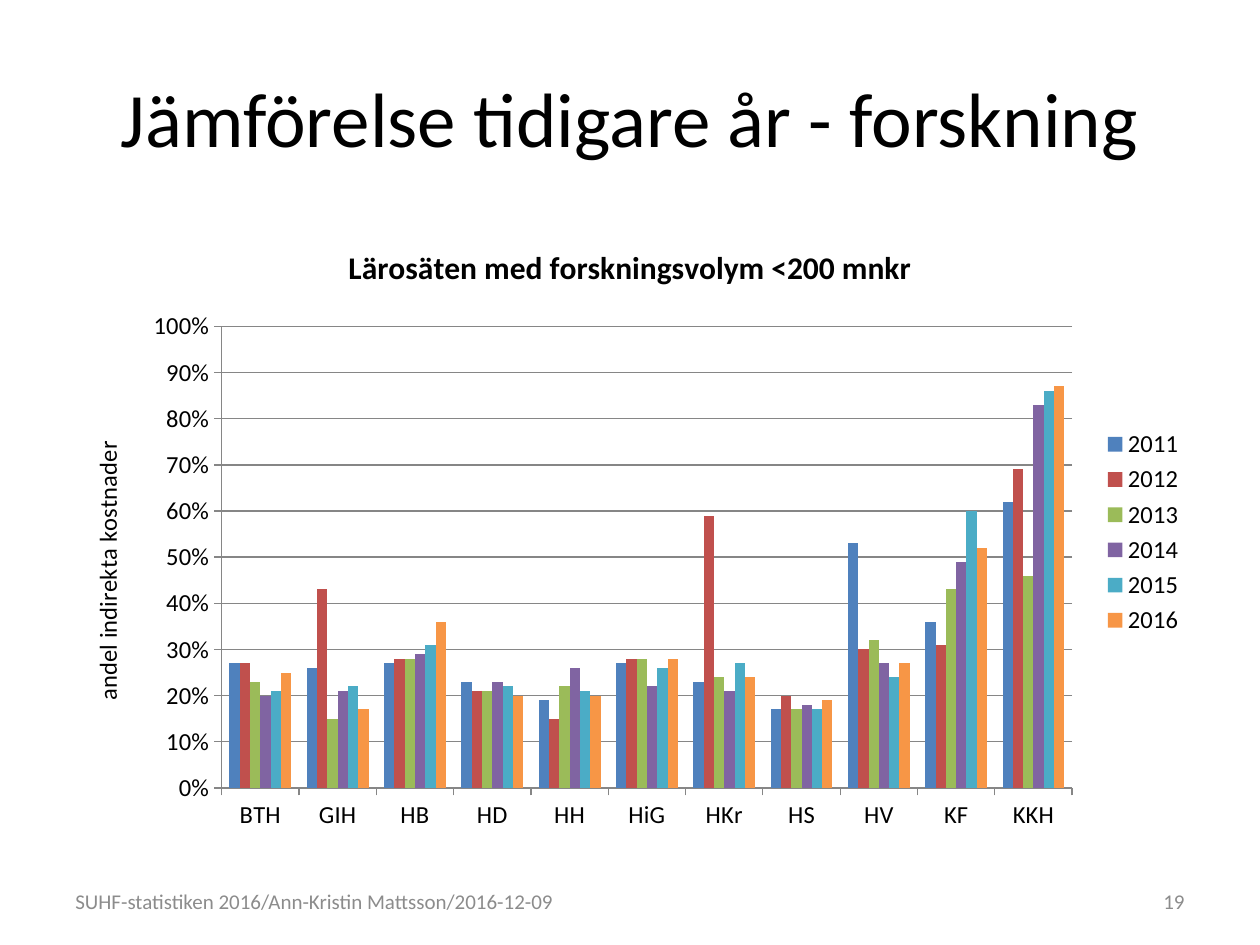
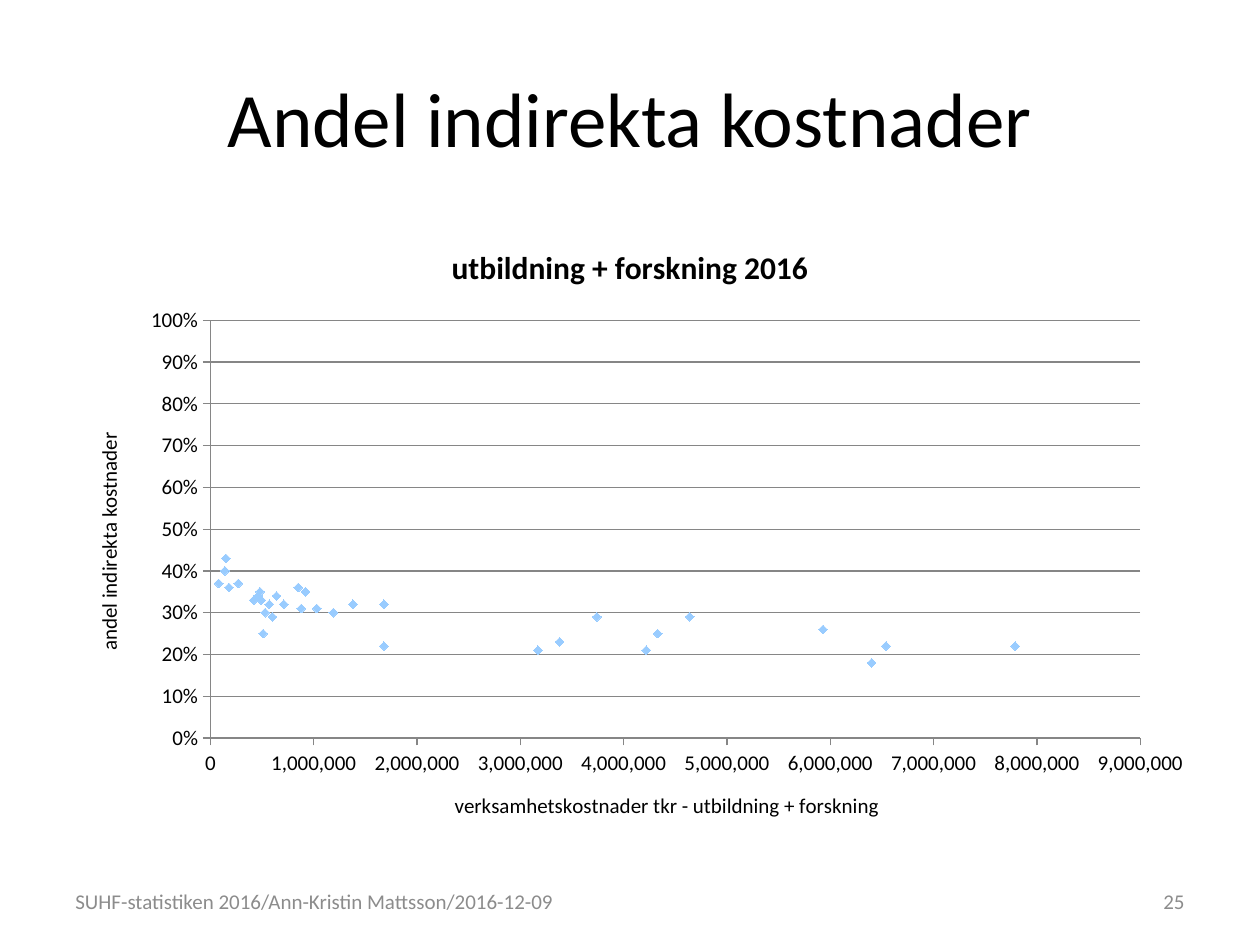
"""Builds two slides that chart the share of indirect costs at Swedish universities."""
from lxml import etree
from pptx import Presentation
from pptx import util as u
from pptx.chart import data as cd
from pptx.dml import color as dc
from pptx.enum import chart as ec, text as et
from pptx.oxml import ns

C = {"text": "000000", "muted": "8C8C8C", "axis": "868686", "point": "99CCFF"}
YEARS = {"2011": "4F81BD", "2012": "C0504D", "2013": "9BBB59",
         "2014": "8064A2", "2015": "4BACC6", "2016": "F79646"}
SCHOOLS = ["BTH", "GIH", "HB", "HD", "HH", "HiG", "HKr", "HS", "HV", "KF", "KKH"]
SHARES = [
    [0.27, 0.26, 0.27, 0.23, 0.19, 0.27, 0.23, 0.17, 0.53, 0.36, 0.62],
    [0.27, 0.43, 0.28, 0.21, 0.15, 0.28, 0.59, 0.2, 0.3, 0.31, 0.69],
    [0.23, 0.15, 0.28, 0.21, 0.22, 0.28, 0.24, 0.17, 0.32, 0.43, 0.46],
    [0.2, 0.21, 0.29, 0.23, 0.26, 0.22, 0.21, 0.18, 0.27, 0.49, 0.83],
    [0.21, 0.22, 0.31, 0.22, 0.21, 0.26, 0.27, 0.17, 0.24, 0.6, 0.86],
    [0.25, 0.17, 0.36, 0.2, 0.2, 0.28, 0.24, 0.19, 0.27, 0.52, 0.87]]
COSTS = [
    (0.42, 0.33), (3.38, 0.23), (0.51, 0.25), (0.14, 0.4), (5.93, 0.26), (0.64, 0.34),
    (0.6, 0.29), (0.53, 0.3), (0.57, 0.32), (0.85, 0.36), (0.49, 0.33), (0.46, 0.34),
    (0.48, 0.35), (1.03, 0.31), (0.18, 0.36), (6.4, 0.18), (0.08, 0.37), (0.15, 0.43),
    (4.33, 0.25), (3.74, 0.29), (1.68, 0.32), (1.68, 0.22), (7.79, 0.22), (1.38, 0.32),
    (0.88, 0.31), (0.92, 0.35), (0.71, 0.32), (0.27, 0.37), (3.17, 0.21), (4.64, 0.29),
    (4.22, 0.21), (6.54, 0.22), (1.19, 0.3)]

prs = Presentation()
prs.slide_width, prs.slide_height = u.Inches(10), u.Inches(7.5)
COL, ROW = prs.slide_width // 20, prs.slide_height // 150


def set_font(font, size, color="text", bold=False):
    """Apply one set of format values to a font."""
    fmt = {"name": "Calibri", "size": u.Pt(size), "bold": bold}
    for key, value in fmt.items():
        setattr(font, key, value)
    font.color.rgb = dc.RGBColor.from_string(C[color])


def add_title(owner, words, size, bold=False):
    """Give a chart or an axis a title."""
    tf = (owner.chart_title if hasattr(owner, "chart_title") else owner.axis_title).text_frame
    tf.text = words
    set_font(tf.paragraphs[0].runs[0].font, size, bold=bold)


bars = cd.CategoryChartData(number_format="0%")
bars.categories = SCHOOLS
for year, shares in zip(YEARS, SHARES):
    bars.add_series(year, shares)
dots = cd.XyChartData()
points = dots.add_series("Series 1")
for millions, share in COSTS:
    points.add_data_point(round(millions * 1_000_000), share)

pages = [
    {"title": "Jämförelse tidigare år - forskning", "number": "19", "data": bars,
     "kind": ec.XL_CHART_TYPE.COLUMN_CLUSTERED, "size": 14, "x_title": None,
     "heading": "Lärosäten med forskningsvolym <200 mnkr",
     "plot": {"x": 0.14, "y": 0.17, "w": 0.75, "h": 0.74}},
    {"title": "Andel indirekta kostnader", "number": "25", "data": dots,
     "kind": ec.XL_CHART_TYPE.XY_SCATTER, "size": 12,
     "x_title": "verksamhetskostnader tkr - utbildning + forskning",
     "heading": "utbildning + forskning 2016",
     "plot": {"x": 0.13, "y": 0.16, "w": 0.82, "h": 0.67}}]

for page in pages:
    s = prs.slides.add_slide(prs.slide_layouts[6])
    labels = [
        (page["title"], 1, 6, 18, 25, 44, "text", et.PP_ALIGN.CENTER),
        ("SUHF-statistiken 2016/Ann-Kristin Mattsson/2016-12-09",
         1, 139, 9, 8, 12, "muted", et.PP_ALIGN.LEFT),
        (page["number"], 14, 139, 5, 8, 12, "muted", et.PP_ALIGN.RIGHT)]
    for words, col, row, cols, rows, size, color, align in labels:
        tf = s.shapes.add_textbox(col * COL, row * ROW, cols * COL, rows * ROW).text_frame
        tf.word_wrap, tf.vertical_anchor = True, et.MSO_ANCHOR.MIDDLE
        p = tf.paragraphs[0]
        p.alignment = align
        r = p.add_run()
        r.text = words
        set_font(r.font, size, color)

    chart = s.shapes.add_chart(page["kind"], COL, 35 * ROW, 18 * COL, 99 * ROW,
                               page["data"]).chart
    set_font(chart.font, 10)
    add_title(chart, page["heading"], 18, bold=True)
    chart.chart_title.include_in_layout = False
    x_axis, y_axis = chart.category_axis, chart.value_axis
    for axis in (x_axis, y_axis):
        axis.has_major_gridlines = axis is y_axis
        axis.major_tick_mark = ec.XL_TICK_MARK.OUTSIDE
        axis.minor_tick_mark = ec.XL_TICK_MARK.NONE
        set_font(axis.tick_labels.font, page["size"])
        lines = [axis.format.line]
        if axis is y_axis:
            lines.append(axis.major_gridlines.format.line)
        for line in lines:
            line.color.rgb = dc.RGBColor.from_string(C["axis"])
            line.width = u.Pt(0.75)
    for key, value in {"minimum_scale": 0, "maximum_scale": 1, "major_unit": 0.1}.items():
        setattr(y_axis, key, value)
    y_axis.tick_labels.number_format = "0%"
    y_axis.tick_labels.number_format_is_linked = False
    add_title(y_axis, "andel indirekta kostnader", page["size"])

    plot = chart.plots[0]
    plot.vary_by_categories = False
    if page["data"] is bars:
        plot.gap_width, plot.overlap = 150, 0
        for series, color in zip(plot.series, YEARS.values()):
            series.format.fill.solid()
            series.format.fill.fore_color.rgb = dc.RGBColor.from_string(color)
        chart.has_legend = True
        chart.legend.position = ec.XL_LEGEND_POSITION.RIGHT
        chart.legend.include_in_layout = False
        set_font(chart.legend.font, page["size"])
    else:
        chart.has_legend = False
        add_title(x_axis, page["x_title"], page["size"])
        x_axis.minimum_scale, x_axis.maximum_scale = 0, 9_000_000
        x_axis.major_unit = 1_000_000
        x_axis.tick_labels.number_format = "#,##0"
        x_axis.tick_labels.number_format_is_linked = False
        series = plot.series[0]
        series.smooth = False
        series.format.line.fill.background()
        marker = series.marker
        marker.style, marker.size = ec.XL_MARKER_STYLE.DIAMOND, 5
        marker.format.fill.solid()
        for ink in (marker.format.fill.fore_color, marker.format.line.color):
            ink.rgb = dc.RGBColor.from_string(C["point"])

    area = chart.plots[0]._element.getparent()
    for old in area.findall(ns.qn("c:layout")):
        area.remove(old)
    layout = etree.Element(ns.qn("c:layout"))
    area.insert(0, layout)
    manual = etree.SubElement(layout, ns.qn("c:manualLayout"))
    settings = {"layoutTarget": "inner", "xMode": "edge", "yMode": "edge", **page["plot"]}
    for tag, value in settings.items():
        etree.SubElement(manual, ns.qn("c:" + tag)).set("val", str(value))

prs.save("out.pptx")
